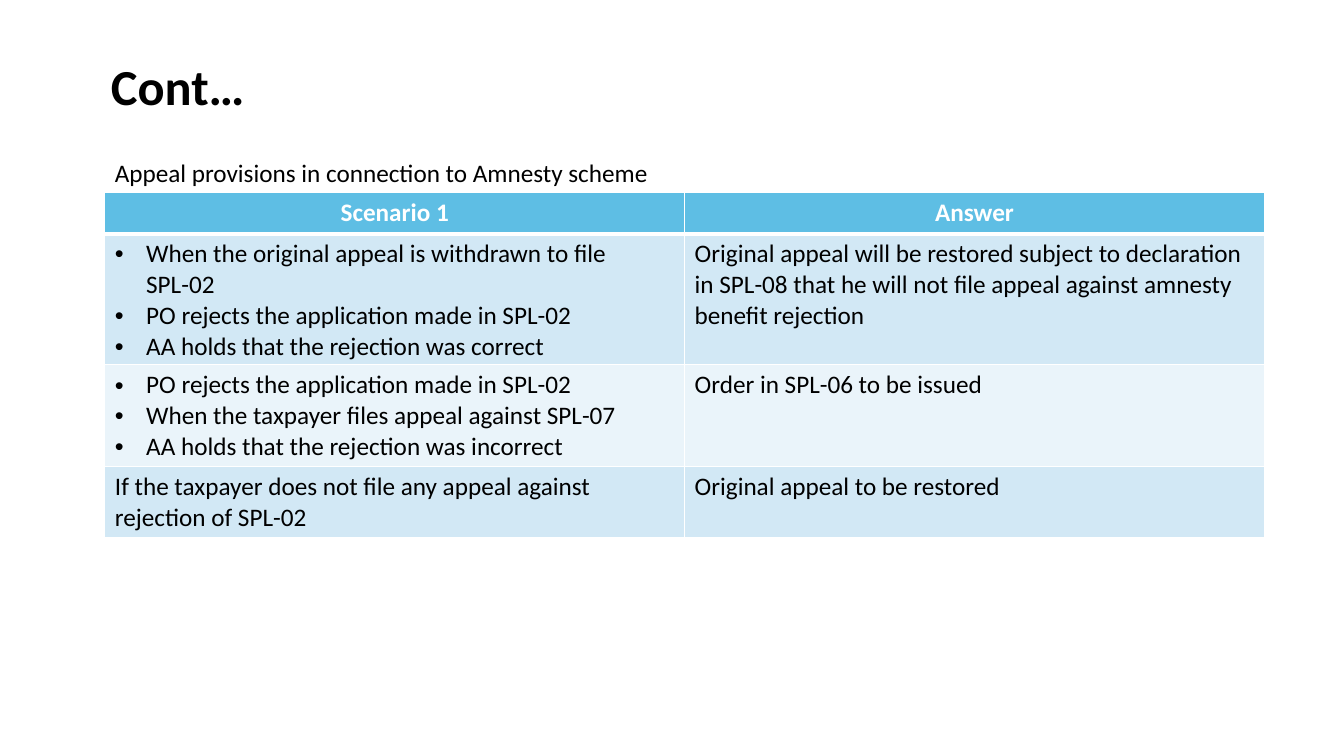
from lxml import etree
from pptx import Presentation
from pptx import util as u
from pptx.dml.color import RGBColor
from pptx.enum import text
from pptx.oxml.ns import qn

WIDE, HIGH = 13.33, 7.5
LEFT, SPAN = 1.04, 11.5
HUES = {"ink": "000000", "white": "FFFFFF", "head": "5EBEE4",
        "dark": "D2E8F5", "pale": "EAF4FA"}
ROWS = [
    (0.41, "head", ["Scenario 1"], "Answer"),
    (1.29, "dark",
     ["When the original appeal is withdrawn to file SPL-02",
      "PO rejects the application made in SPL-02",
      "AA holds that the rejection was correct"],
     "Original appeal will be restored subject to declaration in SPL-08 "
     "that he will not file appeal against amnesty benefit rejection"),
    (1.01, "pale",
     ["PO rejects the application made in SPL-02",
      "When the taxpayer files appeal against SPL-07",
      "AA holds that the rejection was incorrect"],
     "Order in SPL-06 to be issued"),
    (0.7, "dark",
     ["If the taxpayer does not file any appeal against rejection of SPL-02"],
     "Original appeal to be restored"),
]


def hue(name):
    return RGBColor.from_string(HUES[name])


def style(para, size, color="ink", bold=False, align=text.PP_ALIGN.LEFT):
    para.alignment = align
    font = para.font
    font.name, font.size, font.bold = "Calibri", u.Pt(size), bold
    font.color.rgb = hue(color)


def place(shape, left, top, width, height):
    shape.left, shape.top = u.Inches(left), u.Inches(top)
    shape.width, shape.height = u.Inches(width), u.Inches(height)


def bullet(para):
    props = para._p.get_or_add_pPr()
    props.set("marL", str(u.Inches(0.31)))
    props.set("indent", str(-u.Inches(0.31)))
    etree.SubElement(props, qn("a:buFont")).set("typeface", "Arial")
    etree.SubElement(props, qn("a:buChar")).set("char", "•")


def border(cell, head):
    props = cell._tc.get_or_add_tcPr()
    for side in "LRTB":
        line = etree.SubElement(props, qn("a:ln" + side))
        line.set("w", str(u.Pt(3 if head and side == "B" else 1)))
        fill = etree.SubElement(line, qn("a:solidFill"))
        etree.SubElement(fill, qn("a:srgbClr")).set("val", HUES["white"])


def fill_cell(cell, lines, color):
    head = color == "head"
    border(cell, head)
    cell.fill.solid()
    cell.fill.fore_color.rgb = hue(color)
    cell.text_frame.text = "\n".join(lines)
    for para in cell.text_frame.paragraphs:
        if head:
            style(para, 18, "white", True, text.PP_ALIGN.CENTER)
        else:
            style(para, 18)
        if len(lines) > 1:
            bullet(para)


def add_title(slide, words):
    title = slide.shapes.title
    place(title, 1, 0.5, 12.03, 0.71)
    frame = title.text_frame
    frame.text = words
    frame.vertical_anchor = text.MSO_ANCHOR.TOP
    frame.auto_size = text.MSO_AUTO_SIZE.NONE
    style(frame.paragraphs[0], 36, bold=True)


def add_lead(slide, words):
    box = slide.shapes.add_textbox(0, 0, 0, 0)
    place(box, LEFT, 1.21, SPAN, 1.22)
    frame = box.text_frame
    frame.word_wrap = True
    frame.text = words
    para = frame.paragraphs[0]
    style(para, 18, align=text.PP_ALIGN.JUSTIFY)
    para.line_spacing = 2.0


def add_grid(slide, rows):
    total = sum(row[0] for row in rows)
    grid = slide.shapes.add_table(
        len(rows), 2, u.Inches(LEFT), u.Inches(1.91),
        u.Inches(SPAN), u.Inches(total)).table
    for i, (height, color, case, answer) in enumerate(rows):
        grid.rows[i].height = u.Inches(height)
        fill_cell(grid.cell(i, 0), case, color)
        fill_cell(grid.cell(i, 1), [answer], color)


def main():
    deck = Presentation()
    deck.slide_width, deck.slide_height = u.Inches(WIDE), u.Inches(HIGH)
    slide = deck.slides.add_slide(deck.slide_layouts[5])
    add_title(slide, "Cont…")
    add_lead(slide, "Appeal provisions in connection to Amnesty scheme")
    add_grid(slide, ROWS)
    deck.save("out.pptx")


if __name__ == "__main__":
    main()
